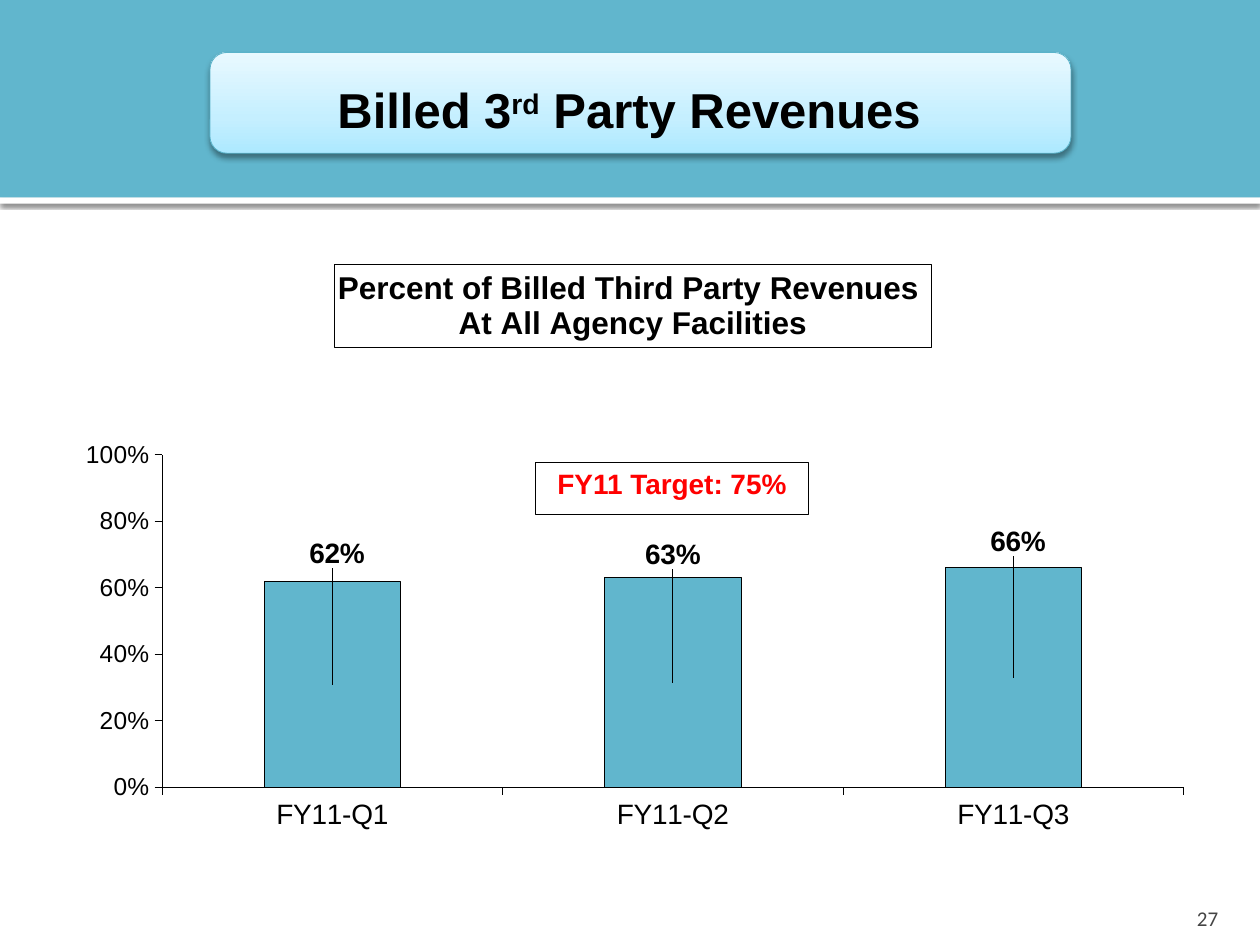
from pptx import Presentation
from pptx.chart.data import CategoryChartData
from pptx.dml.color import RGBColor
from pptx.enum.chart import XL_CHART_TYPE, XL_TICK_MARK
from pptx.enum.shapes import MSO_SHAPE
from pptx.enum.text import MSO_ANCHOR, PP_ALIGN
from pptx.oxml import parse_xml
from pptx.oxml.ns import nsdecls
from pptx.util import Inches, Pt

RECT, ROUNDED = MSO_SHAPE.RECTANGLE, MSO_SHAPE.ROUNDED_RECTANGLE
STACKED, OUTSIDE = XL_CHART_TYPE.COLUMN_STACKED, XL_TICK_MARK.OUTSIDE
NO_TICK = XL_TICK_MARK.NONE
CENTER, RIGHT = PP_ALIGN.CENTER, PP_ALIGN.RIGHT
TOP, BOTTOM = MSO_ANCHOR.TOP, MSO_ANCHOR.BOTTOM
HEX = {"teal": "61B6CD", "edge": "5BB3CA", "white": "FFFFFF", "black": "000000",
       "red": "FF0000", "gray": "454545",
       "ice_low": "ADE9FF", "ice_mid": "C5EFFF", "ice_high": "E9F9FF"}
COLOR = {name: RGBColor.from_string(value) for name, value in HEX.items()}
CELL = Inches(10) // 120  # the slide is a grid of 120 columns by 90 rows


def write(box, text, size, color, bold, align, anchor, insets, font="Arial"):
    """Put one formatted paragraph in a box; insets are in inches."""
    frame = box.text_frame
    frame.word_wrap = True
    frame.vertical_anchor = anchor
    frame.margin_left, frame.margin_top, frame.margin_right, frame.margin_bottom = map(Inches, insets)
    para = frame.paragraphs[0]
    para.text = text
    para.alignment = align
    for span in para.runs:
        span.font.size, span.font.name, span.font.bold = Pt(size), font, bold
        span.font.color.rgb = color
    return para


def set_layout(parent, index, **shares):
    """Give a chart part a manual layout in shares of the chart's size."""
    for old in parent.xpath("c:layout"):
        parent.remove(old)
    target = '<c:layoutTarget val="inner"/>' if "w" in shares else ""
    modes = "".join(f'<c:{axis}Mode val="edge"/>' for axis in "xy") if parent.tag.endswith(("title", "plotArea")) else ""
    sizes = "".join(f'<c:{key} val="{value}"/>' for key, value in shares.items())
    parent.insert(index, parse_xml(f'<c:layout {nsdecls("c")}><c:manualLayout>{target}{modes}{sizes}'
                                   '</c:manualLayout></c:layout>'))


deck = Presentation()
deck.slide_width, deck.slide_height = 120 * CELL, 90 * CELL
page = deck.slides.add_slide(deck.slide_layouts[5])

# Header: white rule, teal band and title plate; shadow is opacity %, blur pt, distance pt
header = [
    (RECT, (0, 18.8, 120, 0.6), "white", (60, 2.5, 0.8)),
    (RECT, (0, 0, 120, 18.8), "teal", None),
    (ROUNDED, (20, 5, 82, 9.6), None, (38, 3.5, 2)),
]
for kind, place, fill, shadow in header:
    box = page.shapes.add_shape(kind, *(int(units * CELL) for units in place))
    if fill:
        box.fill.solid()
        box.fill.fore_color.rgb = COLOR[fill]
        box.line.fill.background()
    else:
        plate = box
        box.line.color.rgb = COLOR["edge"]
        box.line.width = Pt(0.5)
    box.shadow.inherit = False
    if shadow:
        opacity, blur, distance = shadow
        effects = box.element.spPr.xpath("a:effectLst")[0]
        effects.append(parse_xml(
            f'<a:outerShdw {nsdecls("a")} blurRad="{Pt(blur)}" dist="{Pt(distance)}" dir="5400000" '
            f'rotWithShape="0"><a:srgbClr val="{HEX["black"]}"><a:alpha val="{opacity * 1000}"/>'
            '</a:srgbClr></a:outerShdw>'))

# Three-stop gradient on the plate, running upwards
stops = "".join(f'<a:gs pos="{share * 1000}"><a:srgbClr val="{HEX[name]}"/></a:gs>'
                for share, name in ((0, "ice_low"), (35, "ice_mid"), (100, "ice_high")))
plate.element.spPr.xpath("a:prstGeom")[0].addnext(parse_xml(
    f'<a:gradFill {nsdecls("a")} rotWithShape="1"><a:gsLst>{stops}</a:gsLst>'
    '<a:lin ang="16200000" scaled="0"/></a:gradFill>'))

# Title, brought in front of the plate
title = page.shapes.title
title.left, title.top, title.width, title.height = (int(units * CELL) for units in (27.2, 6.4, 67.2, 7.3))
para = write(title, "Billed 3", 28, COLOR["black"], True, CENTER, TOP, (0.06, 0.1, 0.1, 0.05))
for text in ("rd", " Party Revenues "):
    span = para.add_run()
    span.text = text
    span.font.size, span.font.name, span.font.bold = Pt(28), "Arial", True
    span.font.color.rgb = COLOR["black"]
para.runs[1].font._element.set("baseline", "30000")
page.shapes.element.append(title.element)

# Slide number
number = page.shapes.add_textbox(*(int(units * CELL) for units in (107.6, 85, 9.6, 3.6)))
write(number, "27", 12, COLOR["gray"], False, RIGHT, BOTTOM, (0.1, 0.05, 0.1, 0), "Calibri")

# Chart
data = CategoryChartData(number_format="0%")
data.categories = ["FY11-Q1", "FY11-Q2", "FY11-Q3"]
data.add_series("Series 1", (0.62, 0.63, 0.66))
chart = page.shapes.add_chart(STACKED, *(units * CELL for units in (3, 22, 113, 63)), data).chart
chart.has_legend = False
chart.font.size, chart.font.name = Pt(16), "Arial"
chart.font.color.rgb = COLOR["black"]
plot = chart.plots[0]
plot.gap_width, plot.overlap, plot.vary_by_categories = 150, 100, False
bars = plot.series[0]
bars.format.fill.solid()
bars.format.fill.fore_color.rgb = COLOR["teal"]
set_layout(chart.element.xpath("c:chart/c:plotArea")[0], 0, x=0.11, y=0.338, w=0.861, h=0.503)

# Chart title in a frame
chart.has_title = True
heading = chart.chart_title
heading.text_frame.text = "Percent of Billed Third Party Revenues \nAt All Agency Facilities"
for para in heading.text_frame.paragraphs:
    para.alignment = CENTER
    for span in para.runs:
        span.font.size, span.font.name, span.font.bold = Pt(18), "Arial", True
        span.font.color.rgb = COLOR["black"]
set_layout(chart.element.xpath("c:chart/c:title")[0], 1, x=0.255, y=0.05)

# Axes
percent, quarter = chart.value_axis, chart.category_axis
percent.minimum_scale, percent.maximum_scale, percent.major_unit = 0, 1, 0.2
percent.has_major_gridlines = False
percent.tick_labels.number_format = "0%"
percent.tick_labels.number_format_is_linked = False
percent.tick_labels.font.size = Pt(14)
for axis in (percent, quarter):
    axis.major_tick_mark, axis.minor_tick_mark = OUTSIDE, NO_TICK
for part in (percent, quarter, bars, heading):
    part.format.line.color.rgb = COLOR["black"]
    part.format.line.width = Pt(0.25)

# Value labels, lifted from the middle of each bar to above it
for index, (shift, lift) in enumerate([(0.004, -0.197), (0, -0.194), (0.004, -0.206)]):
    font = bars.points[index].data_label.font
    font.size, font.bold, font.name = Pt(16), True, "Arial"
    font.color.rgb = COLOR["black"]
    label = chart.element.xpath(f".//c:dLbl[c:idx/@val='{index}']")[0]
    set_layout(label, 1, x=shift, y=lift)
    label.insert(2, parse_xml(f'<c:numFmt {nsdecls("c")} formatCode="0%" sourceLinked="0"/>'))

# Target note
note = page.shapes.add_shape(RECT, *(units * CELL for units in (51, 44, 26, 5)))
note.fill.background()
note.line.color.rgb = COLOR["black"]
note.line.width = Pt(0.25)
note.shadow.inherit = False
write(note, "FY11 Target: 75%", 16, COLOR["red"], True, CENTER, TOP, (0.04,) * 4)

deck.save("out.pptx")
